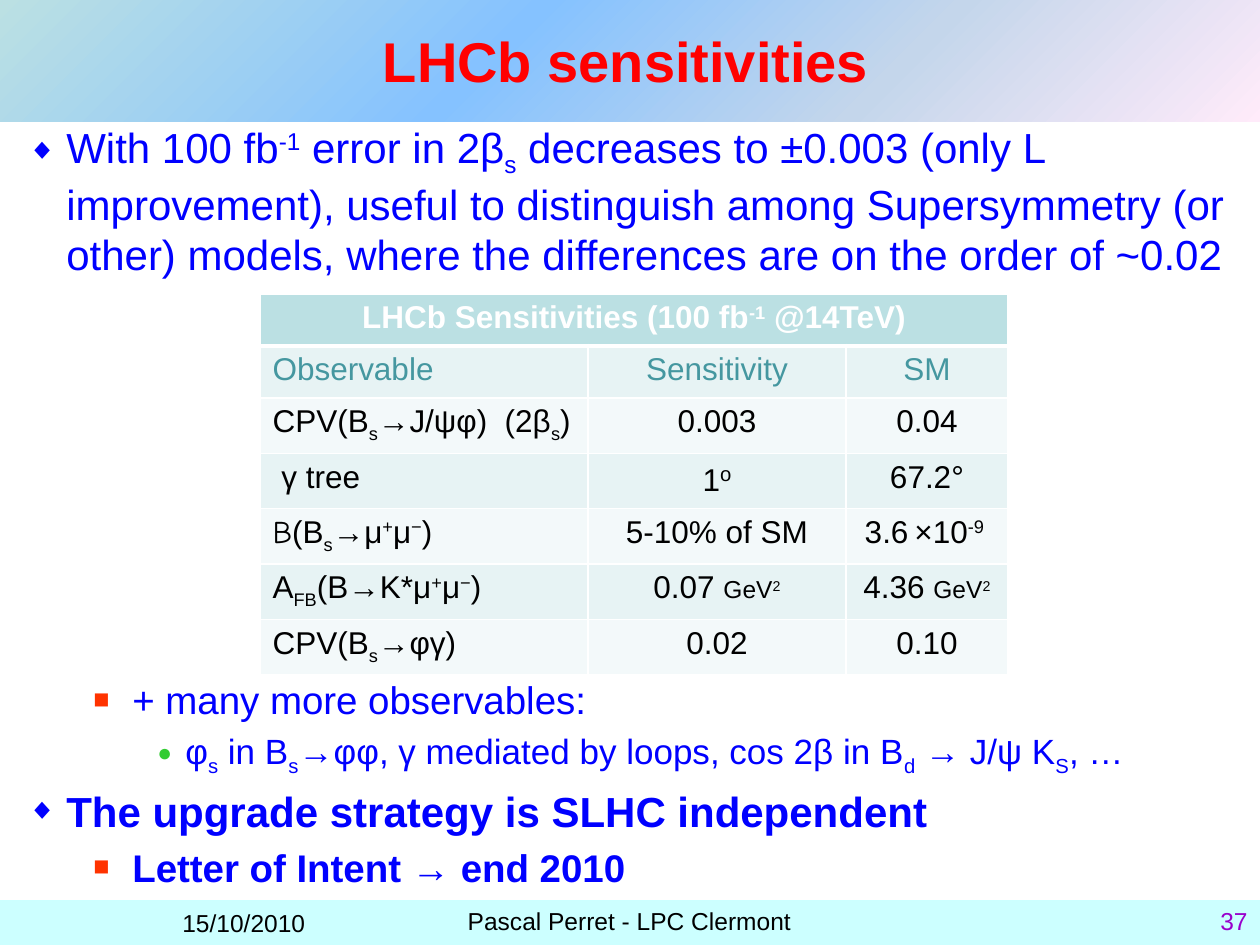
from copy import deepcopy
from dataclasses import dataclass
from typing import NamedTuple

from lxml import etree
from pptx import Presentation
from pptx.dml.color import RGBColor
from pptx.enum.shapes import MSO_SHAPE
from pptx.enum.text import MSO_ANCHOR, PP_ALIGN
from pptx.oxml.ns import qn
from pptx.util import Pt

RECTANGLE = MSO_SHAPE.RECTANGLE
TOP, MIDDLE = MSO_ANCHOR.TOP, MSO_ANCHOR.MIDDLE
LEFT, CENTER, RIGHT = PP_ALIGN.LEFT, PP_ALIGN.CENTER, PP_ALIGN.RIGHT
EMU_PER_PX = 914400 / 126


@dataclass(frozen=True)
class Theme:
    face: str = "Arial"
    script_face: str = "Comic Neue"
    black: str = "000000"
    white: str = "FFFFFF"
    title: str = "FF0000"
    body: str = "0000FF"
    number: str = "9900CC"
    footer_band: str = "CCFFFF"
    gradient: tuple = ((0, "BBE0E3"), (0.4, "85C2FF"), (0.7, "C4D6EB"), (1, "FFEBFA"))
    table_head: str = "BBE0E3"
    table_label: str = "4597A0"
    table_rows: tuple = ("E7F3F4", "F3F9FA")
    title_size: int = 32
    table_size: int = 18
    unit_size: int = 14
    footer_size: int = 14


THEME = Theme()


class Area(NamedTuple):
    left: int
    top: int
    width: int
    height: int


class Span(NamedTuple):
    text: str
    baseline: int = 0
    size: int | None = None
    face: str = THEME.face


class Style(NamedTuple):
    size: int
    color: str
    bold: bool = False
    align: PP_ALIGN = LEFT


class Bullet(NamedTuple):
    level: int
    symbol: str
    color: str
    size: int
    margin: int
    hanging: int


class Item(NamedTuple):
    bullet: Bullet
    spans: tuple
    bold: bool = False


def sub(text: str) -> Span:
    return Span(text, -25)


def sup(text: str, size: int | None = None) -> Span:
    return Span(text, 30, size)


def plain(*texts: str) -> list:
    return [(Span(text),) for text in texts]


def px(value: int) -> int:
    return round(value * EMU_PER_PX)


def place(area: Area) -> list:
    return [px(value) for value in area]


def rgb(color: str) -> RGBColor:
    return RGBColor.from_string(color)


def write(para, spans: tuple, style: Style) -> None:
    para.alignment = style.align
    for span in spans:
        run = para.add_run()
        run.text = span.text
        run.font.name = span.face
        run.font.size = Pt(span.size or style.size)
        run.font.bold = style.bold
        run.font.color.rgb = rgb(style.color)
        if span.baseline:
            run._r.get_or_add_rPr().set("baseline", str(span.baseline * 1000))


def add_box(page, area: Area, anchor: MSO_ANCHOR = TOP, wrap: bool = True):
    frame = page.shapes.add_textbox(*place(area)).text_frame
    frame.word_wrap = wrap
    frame.vertical_anchor = anchor
    return frame


def add_label(page, area: Area, text: str, style: Style, anchor: MSO_ANCHOR = TOP, wrap: bool = True) -> None:
    write(add_box(page, area, anchor, wrap).paragraphs[0], (Span(text),), style)


def add_band(page, area: Area):
    band = page.shapes.add_shape(RECTANGLE, *place(area))
    band.shadow.inherit = False
    band.line.fill.background()
    return band


def paint_gradient(band, stops: tuple) -> None:
    band.fill.gradient()
    band.fill.gradient_angle = 315
    stop_list = band._element.spPr.find(qn("a:gradFill")).find(qn("a:gsLst"))
    for _ in stops[2:]:
        stop_list.append(deepcopy(stop_list[0]))
    for stop, (position, color) in zip(band.fill.gradient_stops, stops):
        stop.position = position
        stop.color.rgb = rgb(color)


def set_bullet(para, bullet: Bullet) -> None:
    para.level = bullet.level
    properties = para._p.get_or_add_pPr()
    properties.set("marL", str(px(bullet.margin)))
    properties.set("indent", str(-px(bullet.hanging)))
    color = etree.SubElement(properties, qn("a:buClr"))
    etree.SubElement(color, qn("a:srgbClr"), val=bullet.color)
    etree.SubElement(properties, qn("a:buSzPct"), val="70000")
    etree.SubElement(properties, qn("a:buFont"), typeface=THEME.face)
    etree.SubElement(properties, qn("a:buChar"), char=bullet.symbol)


def add_items(page, area: Area, items: list) -> None:
    frame = add_box(page, area)
    for index, item in enumerate(items):
        para = frame.add_paragraph() if index else frame.paragraphs[0]
        set_bullet(para, item.bullet)
        if index:
            para.space_before = Pt(item.bullet.size * 0.2)
        write(para, item.spans, Style(item.bullet.size, THEME.body, item.bold))


def set_cell(cell, fill: str, bottom_width: int) -> None:
    properties = cell._tc.get_or_add_tcPr()
    for side, width in (("L", 1), ("R", 1), ("T", 1), ("B", bottom_width)):
        line = etree.SubElement(properties, qn(f"a:ln{side}"), w=str(Pt(width)))
        paint = etree.SubElement(line, qn("a:solidFill"))
        etree.SubElement(paint, qn("a:srgbClr"), val=THEME.white)
    cell.fill.solid()
    cell.fill.fore_color.rgb = rgb(fill)


def add_sensitivities(page, left: int, top: int, widths: tuple, row_height: int, heading: tuple, rows: list) -> None:
    count = len(rows) + 1
    area = Area(left, top, sum(widths), row_height * count)
    table = page.shapes.add_table(count, len(widths), *place(area)).table
    table.first_row = table.horz_banding = False
    for column, width in zip(table.columns, widths):
        column.width = px(width)
    for row in table.rows:
        row.height = px(row_height)
    for cell in table.rows[0].cells:
        set_cell(cell, THEME.table_head, 3)
    table.cell(0, 0).merge(table.cell(0, len(widths) - 1))
    write(table.cell(0, 0).text_frame.paragraphs[0], heading, Style(THEME.table_size, THEME.white, True, CENTER))
    for index, row in enumerate(rows):
        color = THEME.black if index else THEME.table_label
        for column, spans in enumerate(row):
            cell = table.cell(index + 1, column)
            set_cell(cell, THEME.table_rows[index % 2], 1)
            style = Style(THEME.table_size, color, align=CENTER if column else LEFT)
            write(cell.text_frame.paragraphs[0], spans, style)


def main() -> None:
    deck = Presentation()
    deck.slide_width, deck.slide_height = px(1260), px(945)
    page = deck.slides.add_slide(deck.slide_layouts[6])

    footer = add_band(page, Area(0, 900, 1260, 45))
    footer.fill.solid()
    footer.fill.fore_color.rgb = rgb(THEME.footer_band)
    paint_gradient(add_band(page, Area(0, 0, 1260, 122)), THEME.gradient)

    small = Style(THEME.footer_size, THEME.black)
    add_label(page, Area(966, 900, 294, 45), "37", Style(THEME.footer_size, THEME.number, align=RIGHT))
    add_label(page, Area(59, 20, 1134, 81), "LHCb sensitivities", Style(THEME.title_size, THEME.title, True, CENTER))
    add_label(page, Area(312, 900, 635, 55), "Pascal Perret - LPC Clermont", small._replace(align=CENTER))
    add_label(page, Area(170, 907, 378, 32), "15/10/2010", small, MIDDLE, False)

    diamond = Bullet(0, "◆", THEME.body, 24, 39, 39)
    square = Bullet(1, "■", "FF3300", 22, 105, 39)
    dot = Bullet(2, "●", "33CC33", 20, 158, 28)
    add_items(page, Area(15, 115, 1245, 260), [
        Item(diamond, (Span("With 100 fb"), sup("-1"), Span(" error in 2β"), sub("s"), Span(
            " decreases to ±0.003 (only L improvement), useful to distinguish among Supersymmetry "
            "(or other) models, where the differences are on the order of ~0.02"))),
    ])
    add_items(page, Area(15, 670, 1245, 227), [
        Item(square, (Span("+ many more observables:"),)),
        Item(dot, (Span("φ"), sub("s"), Span(" in B"), sub("s"),
                   Span("→φφ, γ mediated by loops, cos 2β in B"), sub("d"),
                   Span(" → J/ψ K"), sub("S"), Span(", …"))),
        Item(diamond, (Span("The upgrade strategy is SLHC independent"),), True),
        Item(square, (Span("Letter of Intent → end 2010"),), True),
    ])

    muon_pair = (Span("μ"), sup("+"), Span("μ"), sup("−"), Span(")"))
    unit = (Span("GeV", size=THEME.unit_size), sup("2", THEME.unit_size))
    heading = (Span("LHCb Sensitivities (100 fb"), sup("-1"), Span(" @14TeV)"))
    add_sensitivities(page, 260, 294, (328, 258, 162), 52, heading, [
        plain("Observable", "Sensitivity", "SM"),
        [(Span("CPV(B"), sub("s"), Span("→J/ψφ)  (2β"), sub("s"), Span(")")), *plain("0.003", "0.04")],
        [(Span(" γ tree"),), (Span("1"), sup("o", 20)), (Span("67.2°"),)],
        [(Span("B", face=THEME.script_face), Span("(B"), sub("s"), Span("→"), *muon_pair),
         (Span("5-10% of SM"),),
         (Span("3.6"), Span(" ", size=12), Span("×10"), sup("-9 "))],
        [(Span("A"), sub("FB"), Span("(B→K*"), *muon_pair),
         (Span("0.07 "), *unit), (Span("4.36 "), *unit)],
        [(Span("CPV(B"), sub("s"), Span("→φγ)")), *plain("0.02", "0.10")],
    ])
    deck.save("out.pptx")


if __name__ == "__main__":
    main()
